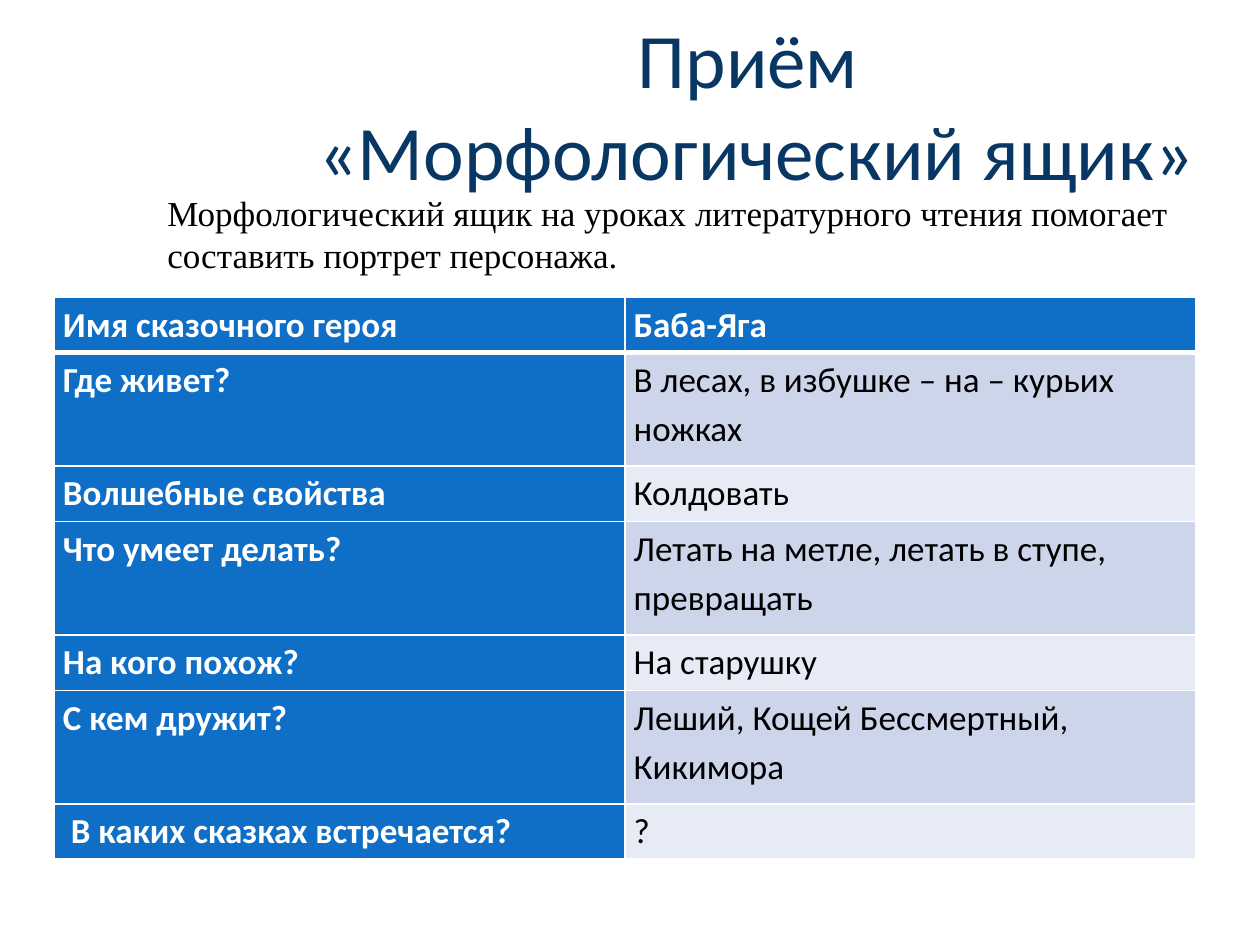
"""Build a slide with a table that portrays a fairy-tale character."""
import pptx
import pptx.util
import pptx.dml.color
import pptx.enum.text
import pptx.oxml
import pptx.oxml.ns

THEME = {
    "title": "083763", "text": "000000", "white": "FFFFFF",
    "blue": "0F6FC6", "bands": ("CCD5EA", "E7EBF5"),
    "sans": "Calibri", "serif": "Times New Roman",
    "large": 44, "body": 20,
}
ROWS = [
    ("Имя сказочного героя", "Баба-Яга"),
    ("Где живет?", "В лесах, в избушке – на – курьих ножках"),
    ("Волшебные свойства", "Колдовать"),
    ("Что умеет делать?", "Летать на метле, летать в ступе, превращать"),
    ("На кого похож?", "На старушку"),
    ("С кем дружит?", "Леший, Кощей Бессмертный, Кикимора"),
    (" В каких сказках встречается?", "?"),
]
ALIGN = pptx.enum.text.PP_ALIGN
Inches = pptx.util.Inches
color = pptx.dml.color.RGBColor.from_string


def write(frame, text, font=THEME["sans"], size=THEME["body"],
          tint=THEME["text"], bold=False, align=ALIGN.LEFT, space=None):
    """Fill a text frame, one paragraph per line of text."""
    frame.text = text
    for par in frame.paragraphs:
        par.alignment = align
        par.line_spacing = space
        for run in par.runs:
            run.font.name = font
            run.font.size = pptx.util.Pt(size)
            run.font.bold = bold
            run.font.color.rgb = color(tint)


def border(cell, side, width):
    """Draw one white side of a cell."""
    cell._tc.get_or_add_tcPr().append(pptx.oxml.parse_xml(
        f'<a:{side} {pptx.oxml.ns.nsdecls("a")} w="{pptx.util.Pt(width)}">'
        f'<a:solidFill><a:srgbClr val="{THEME["white"]}"/></a:solidFill>'
        f'</a:{side}>'))


deck = pptx.Presentation()
deck.slide_width, deck.slide_height = Inches(10), Inches(7.5)
slide = deck.slides.add_slide(deck.slide_layouts[6])

left, top, wide = Inches(0.43), Inches(2.36), Inches(4.53)
short, tall = Inches(0.44), Inches(0.9)
highs = [tall if row in (1, 3, 5) else short for row in range(len(ROWS))]
table = slide.shapes.add_table(
    len(ROWS), 2, left, top, 2 * wide, sum(highs)).table
for col in table.columns:
    col.width = wide
for row, (texts, high) in enumerate(zip(ROWS, highs)):
    table.rows[row].height = high
    for col, text in enumerate(texts):
        cell = table.cell(row, col)
        cell.margin_left = cell.margin_right = Inches(0.07)
        cell.margin_top = cell.margin_bottom = 0
        head = row == 0 or col == 0
        for side in ("lnL", "lnR", "lnT", "lnB"):
            thick = (row, side) in ((0, "lnB"), (1, "lnT"))
            border(cell, side, 3 if thick else 1)
        cell.fill.solid()
        cell.fill.fore_color.rgb = color(
            THEME["blue"] if head else THEME["bands"][(row - 1) % 2])
        write(cell.text_frame, text, bold=head, space=1.15,
              tint=THEME["white" if head else "text"])

title = slide.shapes.add_textbox(
    Inches(2.28), Inches(0.04), Inches(7.45), Inches(1.58)).text_frame
title.word_wrap = False
write(title, "Приём \n«Морфологический ящик»", size=THEME["large"],
      tint=THEME["title"], align=ALIGN.CENTER)

note = slide.shapes.add_textbox(
    Inches(1.23), Inches(1.47), Inches(9.57), Inches(0.77)).text_frame
note.word_wrap = True
note.vertical_anchor = pptx.enum.text.MSO_ANCHOR.MIDDLE
write(note, "Морфологический ящик на уроках литературного чтения помогает \n"
      "составить портрет персонажа. ", font=THEME["serif"],
      align=ALIGN.JUSTIFY)

deck.save("out.pptx")
